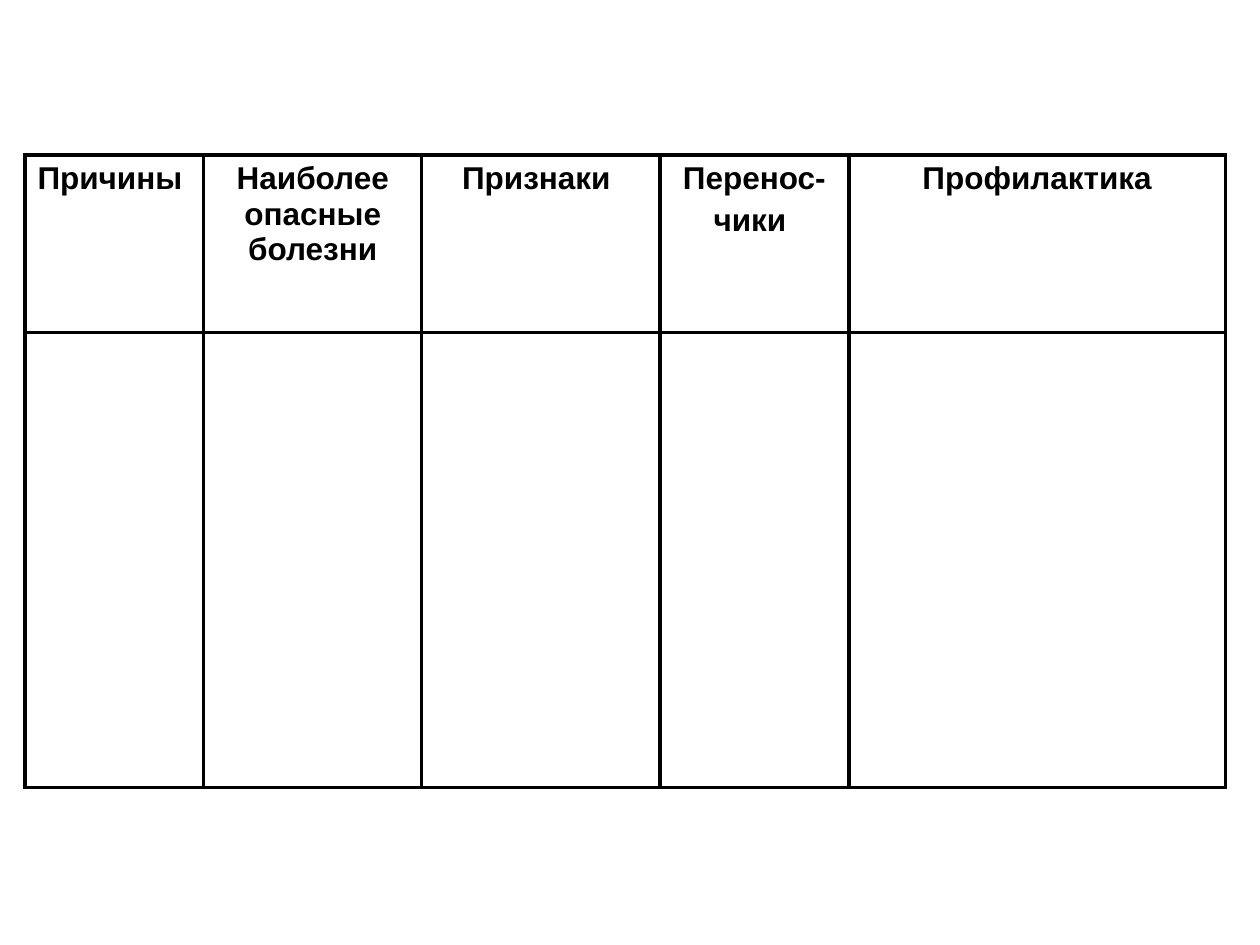
from lxml import etree
from pptx import Presentation
from pptx import util as u
from pptx.dml.color import RGBColor
from pptx.enum import text
from pptx.oxml import ns

COLORS = {"ink": "000000", "paper": "FFFFFF"}
HEADINGS = [
    ["Причины "],
    ["Наиболее опасные болезни"],
    ["Признаки "],
    ["Перенос-", "чики "],
    ["Профилактика"],
]
COLUMN_WIDTHS = [102.24, 124.56, 136.08, 108, 215.28]
ROW_HEIGHTS = [101.5, 260]


class SlideBuilder:
    """Holds the style and the current slide, and adds elements to it."""

    paragraph_format = {"alignment": text.PP_ALIGN.CENTER, "space_before": u.Pt(3.6)}
    font_format = {"name": "Arial", "size": u.Pt(18), "bold": True}
    border_width = 2.25

    def __init__(self, deck):
        self.slide = deck.slides.add_slide(deck.slide_layouts[6])

    def apply(self, target, values):
        for name, value in values.items():
            setattr(target, name, value)

    def border(self, cell):
        properties = cell._tc.get_or_add_tcPr()
        for index, side in enumerate(("lnL", "lnR", "lnT", "lnB")):
            line = etree.Element(ns.qn(f"a:{side}"), w=str(u.Pt(self.border_width)))
            fill = etree.SubElement(line, ns.qn("a:solidFill"))
            etree.SubElement(fill, ns.qn("a:srgbClr"), val=COLORS["ink"])
            properties.insert(index, line)

    def heading(self, cell, lines):
        cell.text = "\n".join(lines)
        for para in cell.text_frame.paragraphs:
            self.apply(para, self.paragraph_format)
            for span in para.runs:
                self.apply(span.font, self.font_format)
                span.font.color.rgb = RGBColor.from_string(COLORS["ink"])

    def table(self, left, top, widths, heights, headings):
        frame = self.slide.shapes.add_table(
            len(heights), len(widths), u.Pt(left), u.Pt(top),
            u.Pt(sum(widths)), u.Pt(sum(heights)))
        table = frame.table
        table.horz_banding = False
        for column, width in zip(table.columns, widths):
            column.width = u.Pt(width)
        for row, height in zip(table.rows, heights):
            row.height = u.Pt(height)
        for cell in table.iter_cells():
            cell.fill.solid()
            cell.fill.fore_color.rgb = RGBColor.from_string(COLORS["paper"])
            self.border(cell)
        for cell, lines in zip(table.rows[0].cells, headings):
            self.heading(cell, lines)


def main():
    deck = Presentation()
    deck.slide_width, deck.slide_height = u.Pt(720), u.Pt(540)
    page = SlideBuilder(deck)
    page.table(14.2, 88.6, COLUMN_WIDTHS, ROW_HEIGHTS, HEADINGS)
    deck.save("out.pptx")


if __name__ == "__main__":
    main()
